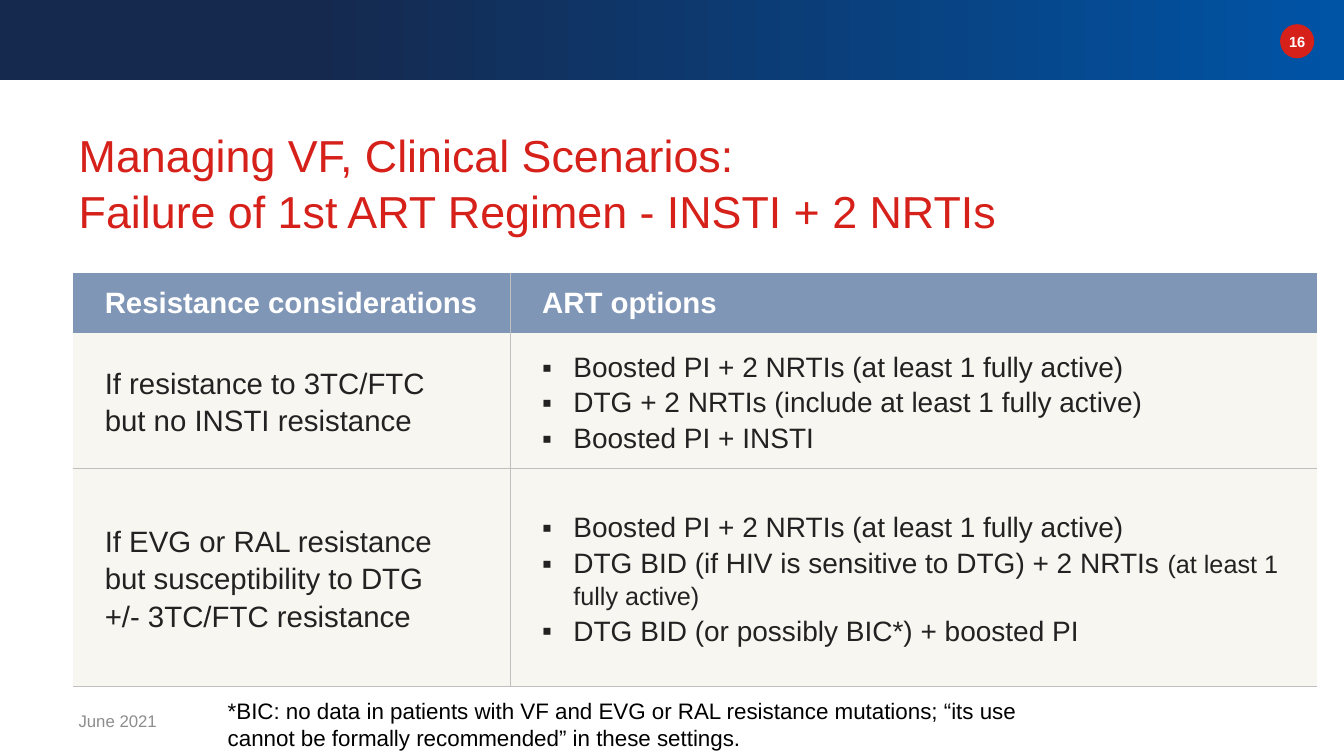
from dataclasses import dataclass

from lxml import etree
from pptx import Presentation
from pptx.dml.color import RGBColor
from pptx.enum.shapes import MSO_SHAPE
from pptx.enum.text import MSO_ANCHOR, PP_ALIGN
from pptx.oxml.ns import qn
from pptx.util import Cm, Pt

RECTANGLE, OVAL = MSO_SHAPE.RECTANGLE, MSO_SHAPE.OVAL
TOP, MIDDLE = MSO_ANCHOR.TOP, MSO_ANCHOR.MIDDLE
LEFT, CENTER = PP_ALIGN.LEFT, PP_ALIGN.CENTER

TITLE = "Managing VF, Clinical Scenarios: \vFailure of 1st ART Regimen - INSTI + 2 NRTIs"
HEADINGS = ("Resistance considerations", "ART options")
SCENARIOS = [
    (
        "If resistance to 3TC/FTC \vbut no INSTI resistance",
        [
            ("Boosted PI + 2 NRTIs (at least 1 fully active)", ""),
            ("DTG + 2 NRTIs (include at least 1 fully active)", ""),
            ("Boosted PI + INSTI", ""),
        ],
    ),
    (
        "If EVG or RAL resistance but susceptibility to DTG\v+/- 3TC/FTC resistance",
        [
            ("Boosted PI + 2 NRTIs (at least 1 fully active)", ""),
            ("DTG BID (if HIV is sensitive to DTG) + 2 NRTIs ", "(at least 1 fully active)"),
            ("DTG BID (or possibly BIC*) + boosted PI", ""),
        ],
    ),
]
PAGE_NUMBER = "16"
DATE = "June 2021"
FOOTNOTE = (
    "*BIC: no data in patients with VF and EVG or RAL resistance mutations; "
    "“its use cannot be formally recommended” in these settings."
)


@dataclass(frozen=True)
class Theme:
    font: str = "Arial"
    navy: str = "15294E"
    blue: str = "0054A6"
    red: str = "D6201A"
    white: str = "FFFFFF"
    black: str = "000000"
    gray: str = "8D8D8D"
    ink: str = "222222"
    heading_fill: str = "8096B6"
    body_fill: str = "F8F6F0"
    rule: str = "BFBFBF"
    title_size: float = 32
    cell_size: float = 21
    option_size: float = 20
    aside_size: float = 18
    footnote_size: float = 16
    date_size: float = 12
    number_size: float = 10.5
    title_spacing: float = 1.05
    heading_spacing: float = 1.02
    body_spacing: float = 1.14


THEME = Theme()
SLIDE_WIDTH, SLIDE_HEIGHT = Cm(33.87), Cm(19.05)
COLUMN_WIDTHS = (Cm(11.02), Cm(20.32))
ROW_HEIGHTS = (Cm(1.52), Cm(3.4), Cm(5.5))


def rgb(color):
    return RGBColor.from_string(color)


def style(run, size, color, bold=False):
    run.font.name = THEME.font
    run.font.size = Pt(size)
    run.font.bold = bold
    run.font.color.rgb = rgb(color)


def write(paragraph, text, size, color, bold=False, spacing=None):
    paragraph.text = text
    paragraph.line_spacing = spacing
    for run in paragraph.runs:
        style(run, size, color, bold)


def add_bullet(paragraph):
    properties = paragraph._p.get_or_add_pPr()
    properties.set("marL", str(Cm(0.79)))
    properties.set("indent", str(-Cm(0.86)))
    bullet_color = etree.SubElement(properties, qn("a:buClr"))
    etree.SubElement(bullet_color, qn("a:srgbClr"), val=THEME.ink)
    etree.SubElement(properties, qn("a:buFont"), typeface=THEME.font)
    etree.SubElement(properties, qn("a:buChar"), char="▪")


def set_borders(cell, ruled_sides):
    properties = cell._tc.get_or_add_tcPr()
    for side in "LRTB":
        line = etree.SubElement(properties, qn(f"a:ln{side}"), w=str(Pt(1)))
        if side in ruled_sides:
            fill = etree.SubElement(line, qn("a:solidFill"))
            etree.SubElement(fill, qn("a:srgbClr"), val=THEME.rule)
        else:
            etree.SubElement(line, qn("a:noFill"))


def format_cell(cell, row, column):
    sides = "R" if column == 0 else "L"
    if row > 0:
        sides += "B"
    if row > 1:
        sides += "T"
    set_borders(cell, sides)
    cell.fill.solid()
    cell.fill.fore_color.rgb = rgb(THEME.body_fill if row else THEME.heading_fill)
    cell.vertical_anchor = MIDDLE
    cell.margin_left = cell.margin_right = Cm(0.79)
    cell.margin_top = cell.margin_bottom = Cm(0.15)


def add_options(cell, options):
    frame = cell.text_frame
    for index, (option, aside) in enumerate(options):
        paragraph = frame.add_paragraph() if index else frame.paragraphs[0]
        add_bullet(paragraph)
        write(paragraph, option, THEME.option_size, THEME.ink, spacing=THEME.body_spacing)
        if aside:
            run = paragraph.add_run()
            run.text = aside
            style(run, THEME.aside_size, THEME.ink)


def add_banner(slide):
    banner = slide.shapes.add_shape(RECTANGLE, 0, 0, SLIDE_WIDTH, Cm(2.03))
    banner.shadow.inherit = False
    banner.line.fill.background()
    banner.fill.gradient()
    banner.fill.gradient_angle = 0
    stops = ((0.23, THEME.navy), (1, THEME.blue))
    for stop, (position, color) in zip(banner.fill.gradient_stops, stops):
        stop.position = position
        stop.color.rgb = rgb(color)

    badge = slide.shapes.add_shape(OVAL, Cm(32.26), Cm(0.61), Cm(0.86), Cm(0.86))
    badge.shadow.inherit = False
    badge.line.fill.background()
    badge.fill.solid()
    badge.fill.fore_color.rgb = rgb(THEME.red)
    frame = badge.text_frame
    frame.margin_left = frame.margin_right = frame.margin_top = frame.margin_bottom = 0
    frame.word_wrap = False
    frame.vertical_anchor = MIDDLE
    write(frame.paragraphs[0], PAGE_NUMBER, THEME.number_size, THEME.white, bold=True)
    frame.paragraphs[0].alignment = CENTER


def add_title(slide):
    title = slide.shapes.title
    title.left, title.top, title.width, title.height = Cm(1.73), Cm(3.07), Cm(29.21), Cm(3)
    title.text_frame.vertical_anchor = MIDDLE
    heading = title.text_frame.paragraphs[0]
    write(heading, TITLE, THEME.title_size, THEME.red, spacing=THEME.title_spacing)
    heading.alignment = LEFT


def add_scenario_table(slide):
    table = slide.shapes.add_table(
        len(ROW_HEIGHTS), len(COLUMN_WIDTHS), Cm(1.85), Cm(6.88),
        sum(COLUMN_WIDTHS), sum(ROW_HEIGHTS),
    ).table
    for column, width in zip(table.columns, COLUMN_WIDTHS):
        column.width = width
    for row, height in enumerate(ROW_HEIGHTS):
        table.rows[row].height = height
        for column in range(len(COLUMN_WIDTHS)):
            format_cell(table.cell(row, column), row, column)
    for column, heading in enumerate(HEADINGS):
        write(table.cell(0, column).text_frame.paragraphs[0], heading,
              THEME.cell_size, THEME.white, bold=True, spacing=THEME.heading_spacing)
    for row, (resistance, options) in enumerate(SCENARIOS, start=1):
        write(table.cell(row, 0).text_frame.paragraphs[0], resistance,
              THEME.cell_size, THEME.ink, spacing=THEME.body_spacing)
        add_options(table.cell(row, 1), options)


def add_note(slide, text, bounds, size, color, anchor):
    frame = slide.shapes.add_textbox(*map(Cm, bounds)).text_frame
    frame.word_wrap = True
    frame.vertical_anchor = anchor
    write(frame.paragraphs[0], text, size, color)


def main():
    deck = Presentation()
    deck.slide_width, deck.slide_height = SLIDE_WIDTH, SLIDE_HEIGHT
    slide = deck.slides.add_slide(deck.slide_layouts[5])
    add_banner(slide)
    add_title(slide)
    add_scenario_table(slide)
    add_note(slide, DATE, (1.73, 17.65, 7.62, 1.02), THEME.date_size, THEME.gray, MIDDLE)
    add_note(slide, FOOTNOTE, (5.49, 17.45, 22.02, 1.63), THEME.footnote_size, THEME.black, TOP)
    deck.save("out.pptx")


if __name__ == "__main__":
    main()
